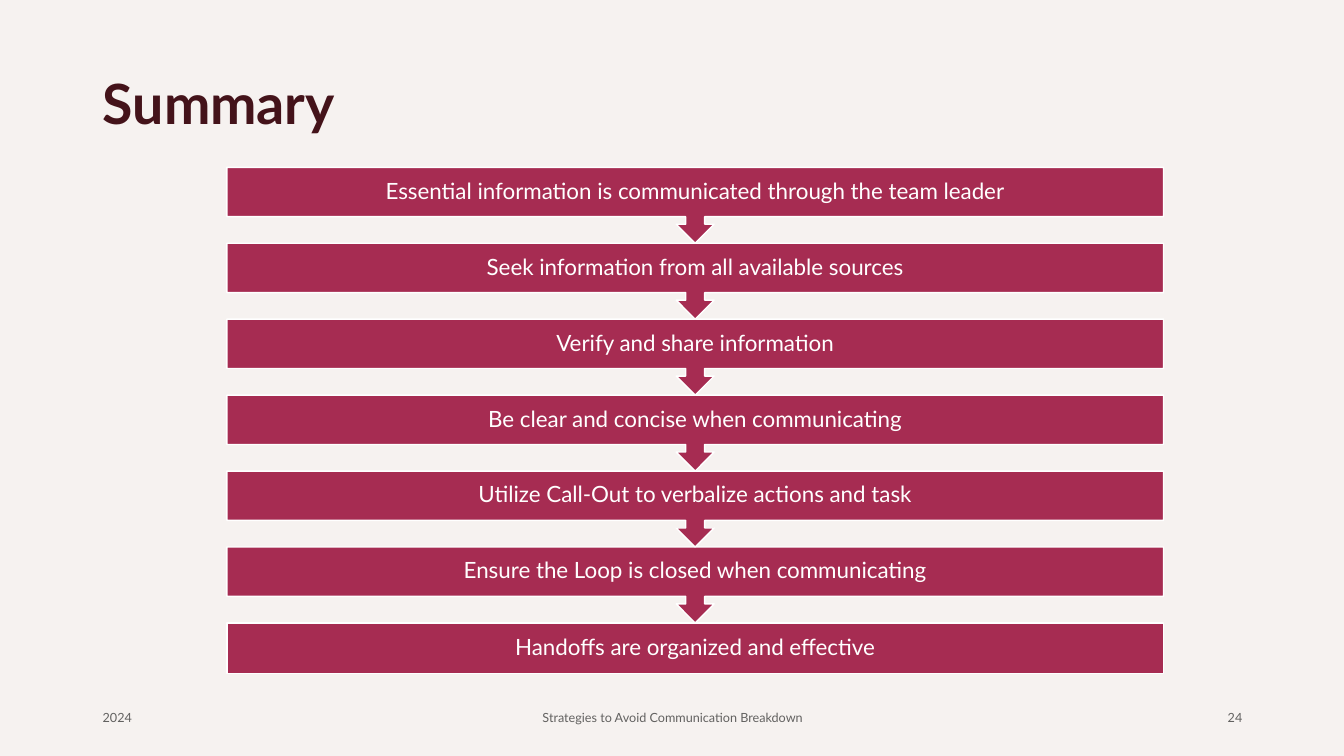
from dataclasses import dataclass

import pptx
import pptx.dml.color
import pptx.enum.shapes
import pptx.enum.text
import pptx.util

Inches = pptx.util.Inches
Pt = pptx.util.Pt
Align = pptx.enum.text.PP_ALIGN
Anchor = pptx.enum.text.MSO_ANCHOR
Shape = pptx.enum.shapes.MSO_SHAPE


@dataclass(frozen=True)
class Theme:
    font: str = "Lato"
    background: str = "F6F2F0"
    title: str = "44131A"
    step: str = "A62C52"
    light: str = "FFFFFF"
    footer: str = "626160"
    title_size: float = 39.6
    step_size: float = 16
    footer_size: float = 9


THEME = Theme()

STEPS = [
    "Essential information is communicated through the team leader",
    "Seek information from all available sources",
    "Verify and share information",
    "Be clear and concise when communicating",
    "Utilize Call-Out to verbalize actions and task",
    "Ensure the Loop is closed when communicating",
    "Handoffs are organized and effective",
]


def color(value):
    return pptx.dml.color.RGBColor.from_string(value)


def write(shape, text, size, ink, align, bold=False):
    frame = shape.text_frame
    frame.word_wrap = True
    frame.auto_size = pptx.enum.text.MSO_AUTO_SIZE.NONE
    frame.vertical_anchor = Anchor.MIDDLE
    frame.text = text
    para = frame.paragraphs[0]
    para.alignment = align
    para.font.name = THEME.font
    para.font.size = Pt(size)
    para.font.bold = bold
    para.font.color.rgb = color(ink)
    return para


def add_title(page, text, left, top, width, height):
    title = page.shapes.title
    title.left, title.top = Inches(left), Inches(top)
    title.width, title.height = Inches(width), Inches(height)
    write(title, text, THEME.title_size, THEME.title, Align.LEFT, bold=True)


def add_steps(page, steps, left, top, width, height):
    bar_height = 0.5
    pitch = (height - bar_height) / (len(steps) - 1)
    last = len(steps) - 1
    for index in range(last, -1, -1):
        kind = Shape.RECTANGLE if index == last else Shape.DOWN_ARROW_CALLOUT
        step_height = bar_height if index == last else pitch
        step = page.shapes.add_shape(
            kind, Inches(left), Inches(top + index * pitch),
            Inches(width), Inches(step_height))
        step.shadow.inherit = False
        step.fill.solid()
        step.fill.fore_color.rgb = color(THEME.step)
        step.line.color.rgb = color(THEME.light)
        step.line.width = Pt(1)
        para = write(step, steps[index], THEME.step_size, THEME.light, Align.CENTER)
        para.line_spacing = 0.9


def add_footer(page, left, top, width, height):
    center_width, side_width = 4.5, 3
    entries = [
        ("2024", left, side_width, Align.LEFT),
        ("Strategies to Avoid Communication Breakdown",
         left + (width - center_width) / 2, center_width, Align.CENTER),
        ("24", left + width - side_width, side_width, Align.RIGHT),
    ]
    for text, box_left, box_width, align in entries:
        box = page.shapes.add_textbox(
            Inches(box_left), Inches(top), Inches(box_width), Inches(height))
        write(box, text, THEME.footer_size, THEME.footer, align)


def add_summary_page(deck):
    page = deck.slides.add_slide(deck.slide_layouts[5])
    page.background.fill.solid()
    page.background.fill.fore_color.rgb = color(THEME.background)
    add_title(page, "Summary", 0.92, 0.61, 11.32, 0.82)
    add_steps(page, STEPS, 2.25, 1.66, 9.29, 5.02)
    add_footer(page, 0.92, 6.92, 11.5, 0.4)


def main():
    deck = pptx.Presentation()
    deck.slide_width = Inches(13.33)
    deck.slide_height = Inches(7.5)
    add_summary_page(deck)
    deck.save("out.pptx")


if __name__ == "__main__":
    main()
